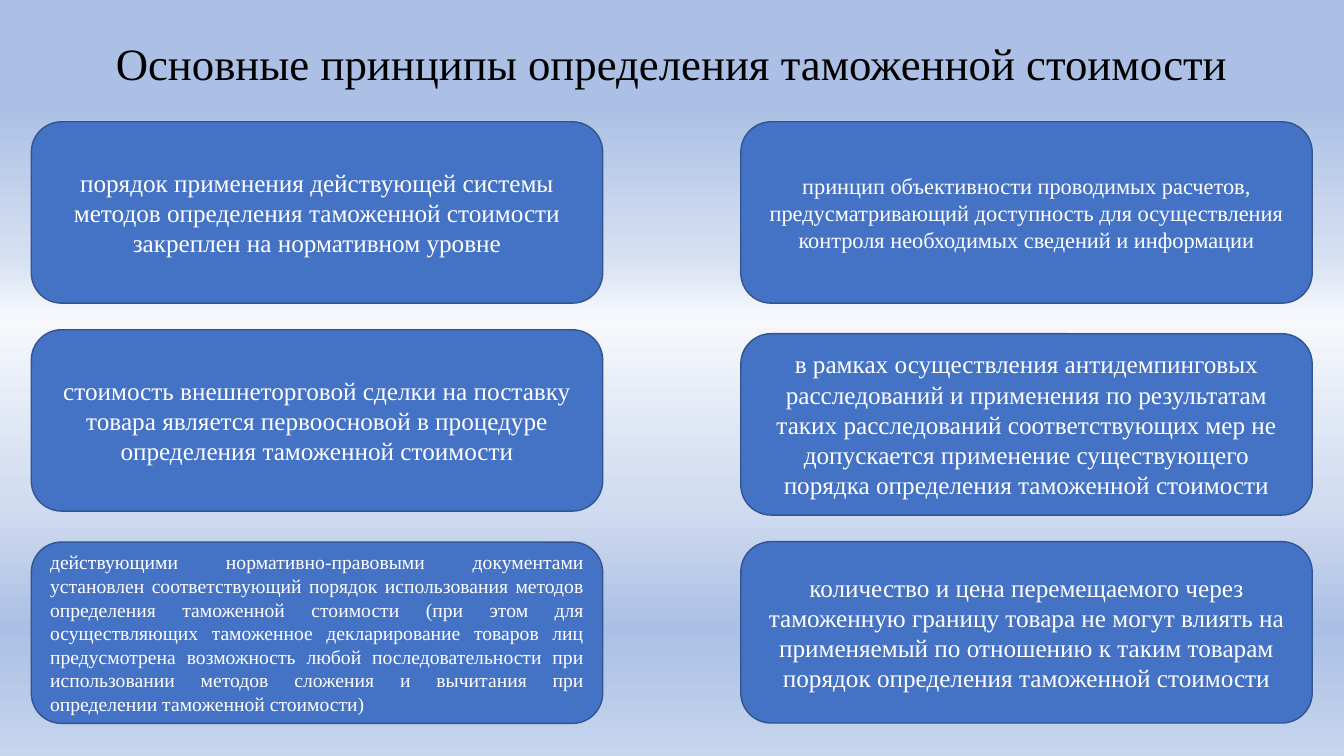
from lxml.etree import SubElement
from pptx import Presentation
from pptx.dml.color import RGBColor
from pptx.enum.shapes import MSO_SHAPE
from pptx.enum.text import MSO_ANCHOR, MSO_AUTO_SIZE, PP_ALIGN
from pptx.oxml.ns import qn
from pptx.util import Cm, Pt

TITLE = "Основные принципы определения таможенной стоимости"
CENTER, JUSTIFY = PP_ALIGN.CENTER, PP_ALIGN.JUSTIFY

# Each column: left edge, then principles as (top, font size, alignment, text); lengths in cm
COLUMNS = [
    (0.79, [
        (3.07, 18, CENTER, "порядок применения действующей системы методов определения "
         "таможенной стоимости закреплен на нормативном уровне"),
        (8.31, 18, CENTER, "стоимость внешнеторговой сделки на поставку товара является "
         "первоосновой в процедуре определения таможенной стоимости"),
        (13.66, 14, JUSTIFY, "действующими нормативно-правовыми документами установлен "
         "соответствующий порядок использования методов определения таможенной стоимости "
         "(при этом для осуществляющих таможенное декларирование товаров лиц предусмотрена "
         "возможность любой последовательности при использовании методов сложения и "
         "вычитания при определении таможенной стоимости)"),
    ]),
    (18.67, [
        (3.07, 16, CENTER, "принцип объективности проводимых расчетов, предусматривающий "
         "доступность для осуществления контроля необходимых сведений и информации"),
        (8.41, 18, CENTER, "в рамках осуществления антидемпинговых расследований и "
         "применения по результатам таких расследований соответствующих мер не допускается "
         "применение существующего порядка определения таможенной стоимости"),
        (13.65, 18, CENTER, "количество и цена перемещаемого через таможенную границу товара "
         "не могут влиять на применяемый по отношению к таким товарам порядок определения "
         "таможенной стоимости"),
    ]),
]
BOX_WIDTH, BOX_HEIGHT = 14.4, 4.57
BACKGROUND = [(14, "ABC0E4"), (34, "D6E0F2"), (42, "F6F8FC"),
              (67, "D0DBF0"), (83, "ABC0E4"), (100, "C7D5ED")]
FRAME = {"word_wrap": True, "auto_size": MSO_AUTO_SIZE.NONE,
         "vertical_anchor": MSO_ANCHOR.MIDDLE}


def color(value):
    return RGBColor.from_string(value)


def apply(target, values):
    for name, value in values.items():
        setattr(target, name, value)


def write(shape, text, size, ink, layout):
    frame = shape.text_frame
    apply(frame, FRAME)
    para = frame.paragraphs[0]
    apply(para, layout)
    span = para.add_run()
    span.text = text
    apply(span.font, {"name": "Times New Roman", "size": Pt(size)})
    span.font.color.rgb = color(ink)


def paint_background(page):
    fill = page.background.fill
    fill.gradient()
    fill.gradient_angle = 270
    stops = next(page.element.iter(qn("a:gsLst")))
    for stop in list(stops):
        stops.remove(stop)
    for percent, value in BACKGROUND:
        stop = SubElement(stops, qn("a:gs"), pos=str(percent * 1000))
        SubElement(stop, qn("a:srgbClr"), val=value)


def add_principle(page, left, top, size, alignment, text):
    box = page.shapes.add_shape(MSO_SHAPE.ROUNDED_RECTANGLE, Cm(left), Cm(top),
                                Cm(BOX_WIDTH), Cm(BOX_HEIGHT))
    box.shadow.inherit = False
    box.fill.solid()
    box.fill.fore_color.rgb = color("4472C4")
    box.line.color.rgb = color("325491")
    box.line.width = Pt(1)
    write(box, text, size, "FFFFFF", {"alignment": alignment})


def main():
    deck = Presentation()
    apply(deck, {"slide_width": Cm(33.87), "slide_height": Cm(19.05)})
    page = deck.slides.add_slide(deck.slide_layouts[5])
    paint_background(page)
    title = page.shapes.title
    apply(title, {"left": Cm(2.33), "top": Cm(0.71), "width": Cm(29.21), "height": Cm(1.9)})
    write(title, TITLE, 32, "000000", {"alignment": CENTER, "line_spacing": 0.9})
    for left, principles in COLUMNS:
        for principle in principles:
            add_principle(page, left, *principle)
    deck.save("out.pptx")


if __name__ == "__main__":
    main()
